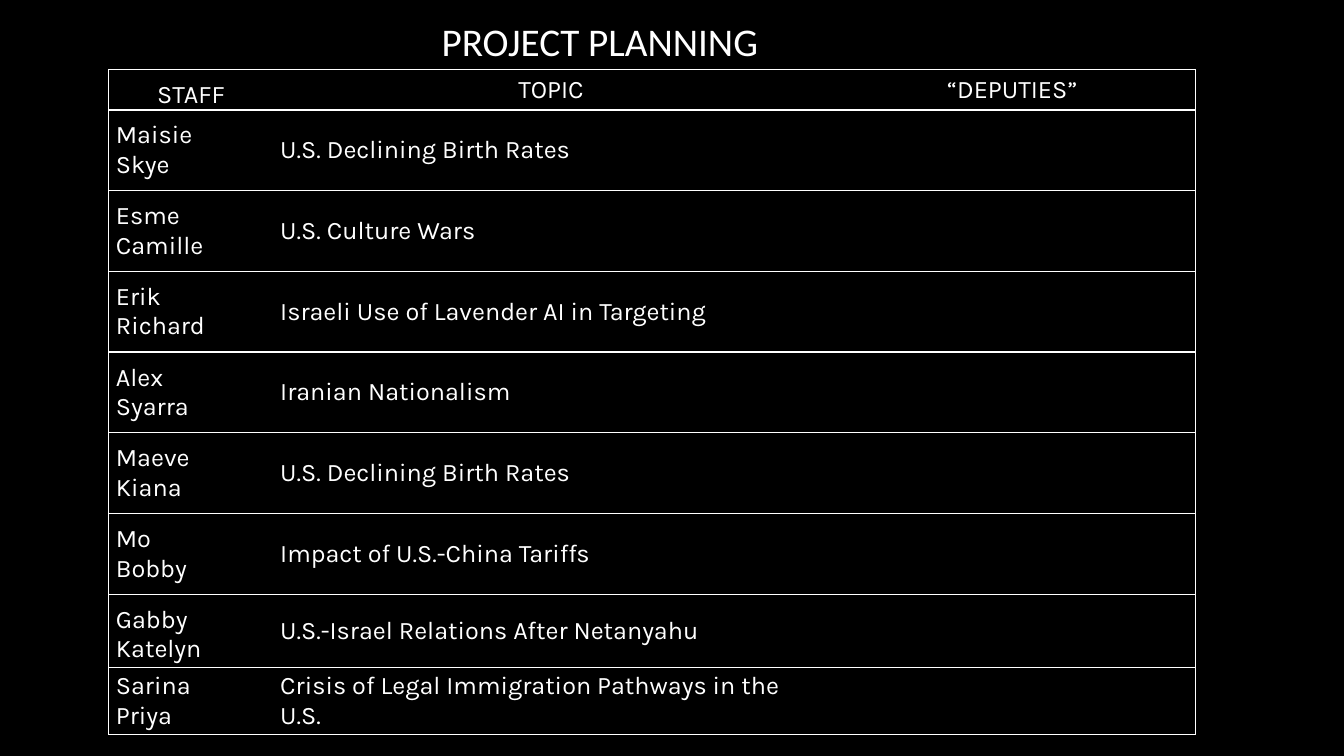
"""Build the project planning slide: staff pairs, topics and deputies."""
from dataclasses import dataclass

from lxml import etree
from pptx import Presentation
from pptx.dml.color import RGBColor
from pptx.enum.text import MSO_ANCHOR, MSO_AUTO_SIZE, PP_ALIGN
from pptx.oxml.ns import qn
from pptx.util import Inches, Pt

TOP, MIDDLE, BOTTOM = MSO_ANCHOR.TOP, MSO_ANCHOR.MIDDLE, MSO_ANCHOR.BOTTOM
LEFT, CENTER = PP_ALIGN.LEFT, PP_ALIGN.CENTER
GROW = MSO_AUTO_SIZE.SHAPE_TO_FIT_TEXT


@dataclass(frozen=True)
class Theme:
    """Colours, fonts and type sizes of the slide."""

    background: str = "000000"
    ink: str = "FFFFFF"
    title_font: str = "Calibri"
    table_font: str = "Karla"
    title_size: int = 28
    table_size: int = 18
    line_width: int = 1


THEME = Theme()
SLIDE_SIZE = (13.33, 7.5)
TITLE_BOX = {"left": 4.28, "top": 0.12, "width": 3.69, "height": 0.57}
TABLE_ORIGIN = (1.08, 0.69)
COLUMN_WIDTHS = (1.63, 5.51, 3.64)
HEADER_HEIGHT, LOOSE_ROW, TIGHT_ROW = 0.4, 0.39, 0.33
SIDE_MARGIN, PAIR_MARGIN = 0.07, 0.1
HEADINGS = ("STAFF", "TOPIC", "“DEPUTIES”")
PROJECTS = (
    ("Maisie", "Skye", "U.S. Declining Birth Rates"),
    ("Esme", "Camille", "U.S. Culture Wars"),
    ("Erik", "Richard", "Israeli Use of Lavender AI in Targeting"),
    ("Alex", "Syarra", "Iranian Nationalism"),
    ("Maeve", "Kiana", "U.S. Declining Birth Rates"),
    ("Mo", "Bobby", "Impact of U.S.-China Tariffs"),
    ("Gabby", "Katelyn", "U.S.-Israel Relations After Netanyahu"),
    ("Sarina", "Priya", "Crisis of Legal Immigration Pathways in the U.S."),
)


def apply_format(target, values):
    """Set each named attribute of the target."""
    for name, value in values.items():
        setattr(target, name, value)


def write_text(frame, text, font_name, size, alignment=LEFT):
    """Write one formatted paragraph into a text frame."""
    frame.text = text
    paragraph = frame.paragraphs[0]
    paragraph.alignment = alignment
    apply_format(paragraph.font, {"name": font_name, "size": Pt(size), "bold": False})
    paragraph.font.color.rgb = RGBColor.from_string(THEME.ink)


def draw_borders(cell, sides):
    """Draw lines on the named sides of a cell and clear the others."""
    properties = cell._tc.get_or_add_tcPr()
    for side in "LRTB":
        line = etree.SubElement(properties, qn(f"a:ln{side}"), w=str(Pt(THEME.line_width)))
        if side in sides:
            fill = etree.SubElement(line, qn("a:solidFill"))
            etree.SubElement(fill, qn("a:srgbClr"), val=THEME.ink)
        else:
            etree.SubElement(line, qn("a:noFill"))


def fill_cell(cell, text, sides, anchor=MIDDLE, alignment=LEFT, above=0, below=0):
    """Write, align and outline one table cell."""
    write_text(cell.text_frame, text, THEME.table_font, THEME.table_size, alignment)
    apply_format(cell, {
        "vertical_anchor": anchor,
        "margin_left": Inches(SIDE_MARGIN),
        "margin_right": Inches(SIDE_MARGIN),
        "margin_top": Inches(above),
        "margin_bottom": Inches(below),
    })
    draw_borders(cell, sides)
    cell.fill.background()


def add_title(slide, text):
    """Place the slide title above the table."""
    title = slide.shapes.title
    apply_format(title, {name: Inches(value) for name, value in TITLE_BOX.items()})
    write_text(title.text_frame, text, THEME.title_font, THEME.title_size)
    apply_format(title.text_frame, {
        "word_wrap": False, "auto_size": GROW, "vertical_anchor": TOP,
    })


def add_header(table):
    """Fill the heading row."""
    for column, (heading, sides) in enumerate(zip(HEADINGS, ("LTB", "TB", "TRB"))):
        above = PAIR_MARGIN if column == 0 else 0
        fill_cell(table.cell(0, column), heading, sides, MIDDLE, CENTER, above)


def add_project(table, index, project):
    """Fill the two rows of one project, with topic and deputies merged."""
    first, second, topic = project
    upper = 1 + 2 * index
    lower = upper + 1
    last = len(PROJECTS) - 1
    above = PAIR_MARGIN if index < last else 0
    below = PAIR_MARGIN if index < last - 1 else 0
    divider = "B" if index < last else ""
    fill_cell(table.cell(upper, 0), first, "LT" + divider, BOTTOM, above=above)
    fill_cell(table.cell(lower, 0), second, "LB", TOP, below=below)
    for column, text, edge in ((1, topic, ""), (2, "", "R")):
        origin, spanned = table.cell(upper, column), table.cell(lower, column)
        origin.merge(spanned)
        fill_cell(origin, text, "TB" + edge)
        fill_cell(spanned, "", "B" + edge)
    table.rows[upper].height = Inches(LOOSE_ROW if above else TIGHT_ROW)
    table.rows[lower].height = Inches(LOOSE_ROW if below else TIGHT_ROW)


def add_planning_table(slide):
    """Add the table of staff, topics and deputies."""
    row_count = 1 + 2 * len(PROJECTS)
    left, top = map(Inches, TABLE_ORIGIN)
    width, height = Inches(sum(COLUMN_WIDTHS)), Inches(row_count * LOOSE_ROW)
    table = slide.shapes.add_table(
        row_count, len(HEADINGS), left, top, width, height).table
    apply_format(table, {"first_row": False, "horz_banding": False})
    for column, column_width in zip(table.columns, COLUMN_WIDTHS):
        column.width = Inches(column_width)
    table.rows[0].height = Inches(HEADER_HEIGHT)
    add_header(table)
    for index, project in enumerate(PROJECTS):
        add_project(table, index, project)


def main():
    """Build and save the presentation."""
    presentation = Presentation()
    presentation.slide_width, presentation.slide_height = map(Inches, SLIDE_SIZE)
    slide = presentation.slides.add_slide(presentation.slide_layouts.get_by_name("Title Only"))
    slide.background.fill.solid()
    slide.background.fill.fore_color.rgb = RGBColor.from_string(THEME.background)
    add_planning_table(slide)
    add_title(slide, "PROJECT PLANNING")
    presentation.save("out.pptx")


if __name__ == "__main__":
    main()
